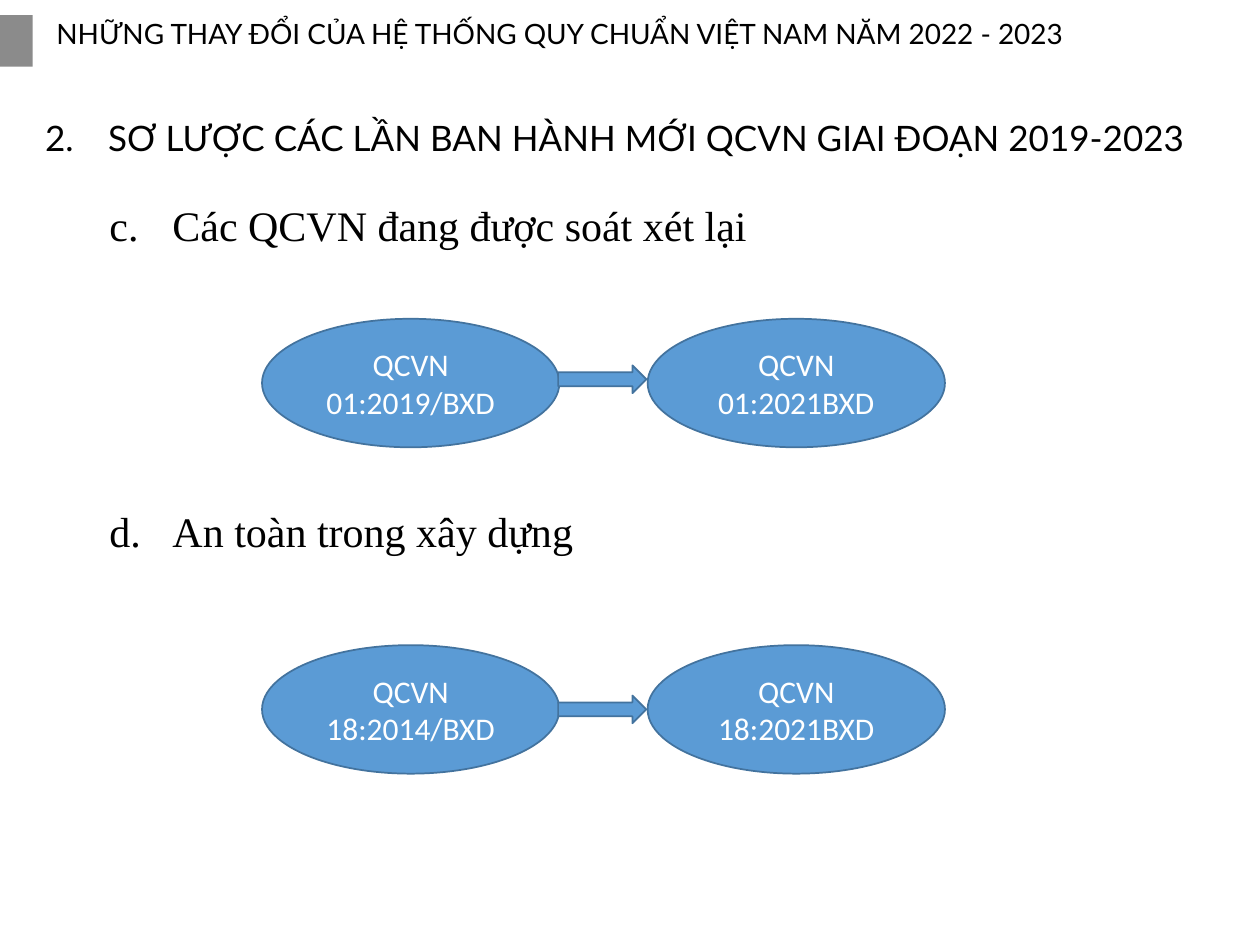
"""Build a slide on recent revisions of Vietnamese technical regulations."""
from dataclasses import dataclass

from lxml import etree
from pptx import Presentation
from pptx.dml.color import RGBColor
from pptx.enum.shapes import MSO_SHAPE
from pptx.enum.text import MSO_ANCHOR, PP_ALIGN
from pptx.oxml.ns import qn
from pptx.util import Inches, Pt

RECTANGLE = MSO_SHAPE.RECTANGLE
ELLIPSE = MSO_SHAPE.OVAL
RIGHT_ARROW = MSO_SHAPE.RIGHT_ARROW
MIDDLE = MSO_ANCHOR.MIDDLE
CENTER = PP_ALIGN.CENTER


@dataclass(frozen=True)
class Theme:
    ink: RGBColor = RGBColor(0x00, 0x00, 0x00)
    white: RGBColor = RGBColor(0xFF, 0xFF, 0xFF)
    grey: RGBColor = RGBColor(0x80, 0x80, 0x80)
    blue: RGBColor = RGBColor(0x5B, 0x9B, 0xD5)
    outline: RGBColor = RGBColor(0x43, 0x73, 0x9E)
    heading_font: str = "Lato"
    item_font: str = "Times New Roman"
    node_font: str = "Calibri"
    title_size: int = 16
    heading_size: int = 20
    item_size: int = 24
    node_size: int = 18


class SlideBuilder:
    def __init__(self, page, theme):
        self.page = page
        self.theme = theme

    def style(self, para, font, size, color):
        para.font.name = font
        para.font.size = Pt(size)
        para.font.color.rgb = color

    def text(self, content, left, top, width, height, font, size, numbering=None):
        box = self.page.shapes.add_textbox(
            Inches(left), Inches(top), Inches(width), Inches(height))
        box.text_frame.word_wrap = True
        para = box.text_frame.paragraphs[0]
        para.text = content
        para.line_spacing = 0.9
        if numbering:
            scheme, start = numbering
            properties = para._p.get_or_add_pPr()
            properties.set("marL", str(Inches(0.5)))
            properties.set("indent", str(Inches(-0.5)))
            etree.SubElement(properties, qn("a:buAutoNum"),
                             type=scheme, startAt=str(start))
        self.style(para, font, size, self.theme.ink)

    def shape(self, preset, left, top, width, height, fill):
        shape = self.page.shapes.add_shape(
            preset, Inches(left), Inches(top), Inches(width), Inches(height))
        shape.shadow.inherit = False
        shape.fill.solid()
        shape.fill.fore_color.rgb = fill
        return shape

    def marker(self, left, top, width, height):
        marker = self.shape(RECTANGLE, left, top, width, height, self.theme.grey)
        marker.line.fill.background()
        color = marker.fill._xPr.find(qn("a:solidFill"))[0]
        etree.SubElement(color, qn("a:alpha"), val="91000")

    def outlined(self, preset, left, top, width, height):
        shape = self.shape(preset, left, top, width, height, self.theme.blue)
        shape.line.color.rgb = self.theme.outline
        shape.line.width = Pt(1)
        return shape

    def node(self, content, left, top):
        node = self.outlined(ELLIPSE, left, top, 2.36, 1.02)
        frame = node.text_frame
        frame.word_wrap = True
        frame.vertical_anchor = MIDDLE
        para = frame.paragraphs[0]
        para.text = content
        para.alignment = CENTER
        self.style(para, self.theme.node_font, self.theme.node_size, self.theme.white)

    def revision(self, old, new, top, arrow_top):
        self.node(old, 2.08, top)
        self.node(new, 5.14, top)
        self.outlined(RIGHT_ARROW, 4.43, arrow_top, 0.7, 0.22)

    def item(self, content, top, start):
        self.text(content, 0.77, top, 7.55, 0.35, self.theme.item_font,
                  self.theme.item_size, ("alphaLcPeriod", start))


def main():
    deck = Presentation()
    deck.slide_width, deck.slide_height = Inches(10), Inches(7.5)
    theme = Theme()
    builder = SlideBuilder(deck.slides.add_slide(deck.slide_layouts[6]), theme)

    builder.marker(0, 0.12, 0.26, 0.41)
    builder.text("SƠ LƯỢC CÁC LẦN BAN HÀNH MỚI QCVN GIAI ĐOẠN 2019-2023",
                 0.26, 0.91, 9.27, 0.35, theme.heading_font, theme.heading_size,
                 ("arabicPeriod", 2))
    builder.text("NHỮNG THAY ĐỔI CỦA HỆ THỐNG QUY CHUẨN VIỆT NAM NĂM 2022 - 2023",
                 0.35, 0.11, 8.94, 0.42, theme.heading_font, theme.title_size)
    builder.item("Các QCVN đang được soát xét lại", 1.58, 3)
    builder.revision("QCVN 01:2019/BXD", "QCVN 01:2021BXD", 2.53, 2.9)
    builder.item("An toàn trong xây dựng", 4.01, 4)
    builder.revision("QCVN 18:2014/BXD", "QCVN 18:2021BXD", 5.12, 5.52)

    deck.save("out.pptx")


if __name__ == "__main__":
    main()
